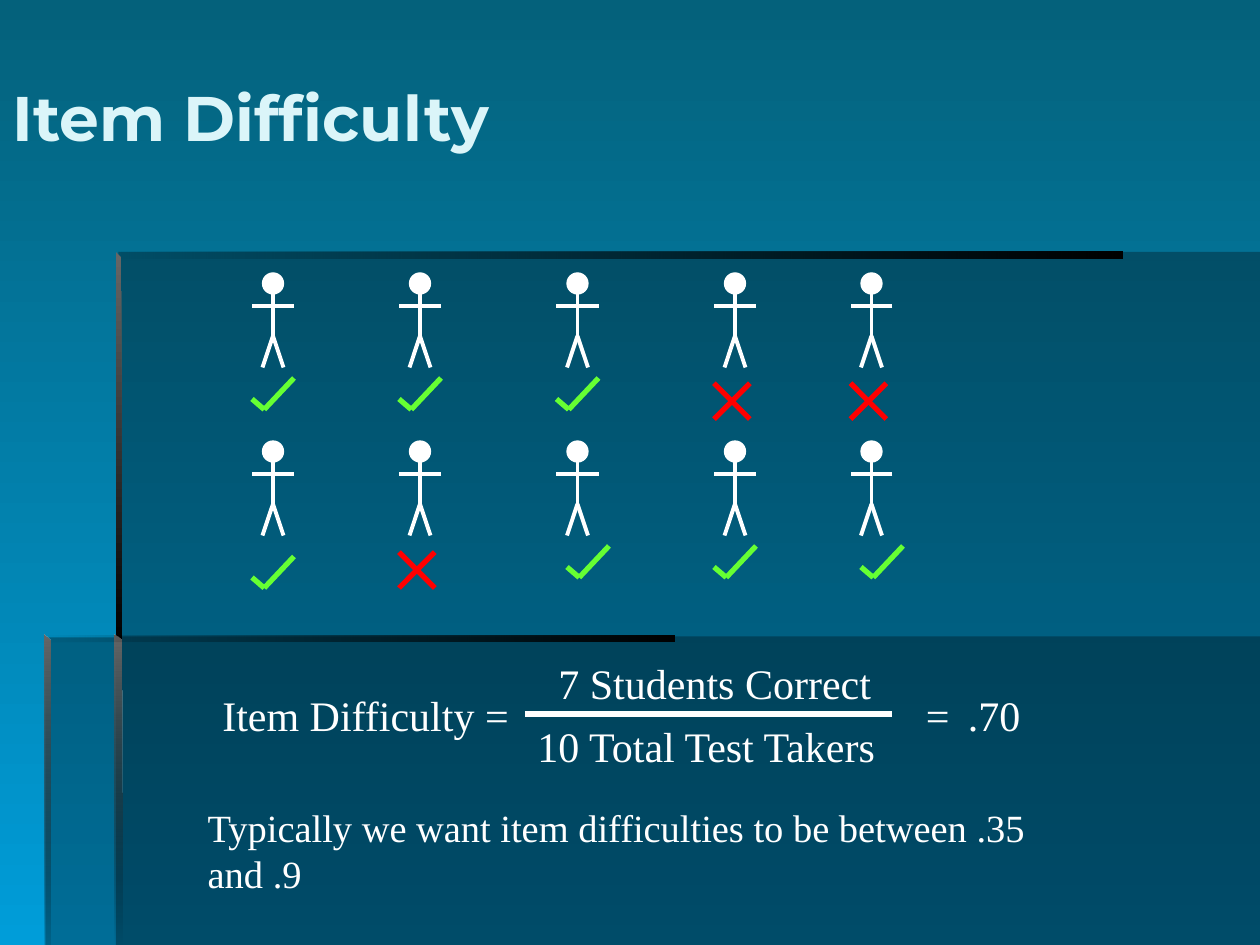
from lxml import etree
from pptx import Presentation
from pptx import util as u
from pptx.dml.color import RGBColor
from pptx.enum import shapes, text
from pptx.oxml import ns

COLORS = {
    "top": "04617B", "bottom": "009DD9", "title": "DBF5F9", "white": "FFFFFF",
    "right": "66FF33", "wrong": "FF0000", "black": "000000", "edge": "666666",
}
SERIF = "Times New Roman"

# Outline, (colour, opacity) of each gradient end, gradient angle
PANELS = [
    [(66.2, 363.6), (66.2, 540), (720, 540), (720, 363.6)],
    [(67.7, 364.3), (25.9, 364.3), (25.9, 540), (720, 540), (720, 144), (67.7, 144)],
]
FADE_IN = [("black", 0), ("black", 100)]
RAILS = [
    ([(66.2, 144), (66.2, 147.6), (641.5, 147.6), (641.5, 144)], FADE_IN, 0),
    ([(66.2, 144), (66.2, 367.2), (69.8, 367.2), (69.1, 146.9)],
     [("edge", 100), ("black", 100)], 270),
    ([(65.5, 540), (69.8, 540), (69.1, 365.8), (65.5, 362.9)],
     [("edge", 100), ("black", 0)], 270),
    ([(25.2, 362.9), (25.2, 366.5), (385.2, 366.5), (385.2, 362.9)], FADE_IN, 0),
    ([(25.2, 362.9), (25.2, 540), (28.8, 540), (28.8, 366.5)],
     [("edge", 100), ("black", 10)], 270),
]

STUDENT_CENTERS = [156, 240, 330, 420, 498]
STUDENT_TOPS = [156, 252]
CHECKS = [(144, 216), (228, 216), (318, 216),
          (144, 318), (324, 312), (408, 312), (492, 312)]
CROSSES = [(408, 219), (486, 219), (228, 315.5)]


def rgb(name):
    return RGBColor.from_string(COLORS[name])


def set_opacity(color_parent, percent):
    color = color_parent.find(".//" + ns.qn("a:srgbClr"))
    etree.SubElement(color, ns.qn("a:alpha"), val=str(percent * 1000))


def set_gradient(fill, ends, angle):
    fill.gradient()
    fill.gradient_angle = angle
    for stop, (color, opacity) in zip(fill.gradient_stops, ends):
        stop.color.rgb = rgb(color)
        if opacity < 100:
            set_opacity(stop._gs, opacity)


def add_outline(slide, points):
    points = [(u.Pt(x), u.Pt(y)) for x, y in points]
    builder = slide.shapes.build_freeform(*points[0])
    builder.add_line_segments(points[1:], close=True)
    outline = builder.convert_to_shape()
    outline.shadow.inherit = False
    outline.line.fill.background()
    return outline


def add_backdrop(slide):
    set_gradient(slide.background.fill, [("top", 100), ("bottom", 100)], 270)
    for points in PANELS:
        panel = add_outline(slide, points)
        panel.fill.solid()
        panel.fill.fore_color.rgb = rgb("black")
        set_opacity(panel._element.spPr, 30)
    for points, ends, angle in RAILS:
        set_gradient(add_outline(slide, points).fill, ends, angle)


def add_line(parent, x1, y1, x2, y2, color, width):
    line = parent.shapes.add_connector(
        shapes.MSO_CONNECTOR.STRAIGHT, u.Pt(x1), u.Pt(y1), u.Pt(x2), u.Pt(y2))
    line.line.color.rgb = rgb(color)
    line.line.width = u.Pt(width)
    etree.SubElement(line._element.spPr, ns.qn("a:effectLst"))


def add_student(slide, center, top):
    student = slide.shapes.add_group_shape()
    limbs = [(0, 12, 0, 36), (12, 19, -12, 19), (0, 36, -6, 54), (0, 36, 6, 54)]
    for x1, y1, x2, y2 in limbs:
        add_line(student, center + x1, top + y1, center + x2, top + y2, "white", 2.25)
    head = student.shapes.add_shape(
        shapes.MSO_SHAPE.OVAL, u.Pt(center - 6), u.Pt(top), u.Pt(12), u.Pt(12))
    head.shadow.inherit = False
    head.fill.solid()
    head.fill.fore_color.rgb = head.line.color.rgb = rgb("white")
    head.line.width = u.Pt(0.75)


def add_mark(slide, left, top, strokes, color):
    mark = slide.shapes.add_group_shape()
    for x1, y1, x2, y2 in strokes:
        add_line(mark, left + x1, top + y1, left + x2, top + y2, color, 3)


def format_span(span, color, **formats):
    for name, value in formats.items():
        setattr(span.font, name, value)
    span.font.color.rgb = rgb(color)


def place(box, left, top, width, height):
    for name, value in dict(left=left, top=top, width=width, height=height).items():
        setattr(box, name, u.Pt(value))


def add_title(slide, wording):
    title = slide.shapes.title
    place(title, 0, 21.6, 648, 90)
    title.text_frame.vertical_anchor = text.MSO_ANCHOR.MIDDLE
    para = title.text_frame.paragraphs[0]
    para.alignment = text.PP_ALIGN.LEFT
    span = para.add_run()
    span.text = wording
    format_span(span, "title", name="Montserrat", size=u.Pt(36), bold=True)


def add_text(slide, wording, left, top, width, height, size=24):
    box = slide.shapes.add_textbox(*map(u.Pt, (left, top, width, height)))
    box.text_frame.word_wrap = True
    para = box.text_frame.paragraphs[0]
    span = para.add_run()
    span.text = wording
    format_span(span, "white", name=SERIF, size=u.Pt(size))
    return box


def add_formula(slide):
    parts = [
        ("Item Difficulty =", 120, 390, 180),
        ("7 Students Correct", 312, 372, 198),
        ("10 Total Test Takers", 300, 408, 252),
        ("= .70", 522, 390, 180),
    ]
    for wording, left, top, width in parts:
        box = add_text(slide, wording, left, top, width, 36.7)
        box.text_frame.vertical_anchor = text.MSO_ANCHOR.MIDDLE
    # Widen the gap after the last equals sign
    para = box.text_frame.paragraphs[0]
    equals, result = para.runs[0], para.add_run()
    equals.text, result.text = "= ", ".70"
    equals._r.get_or_add_rPr().set("spc", "225")
    format_span(result, "white", name=SERIF, size=u.Pt(24))
    add_line(slide, 300, 408, 510, 408, "white", 3)


def main():
    deck = Presentation()
    deck.slide_width, deck.slide_height = u.Pt(720), u.Pt(540)
    slide = deck.slides.add_slide(deck.slide_layouts[5])
    add_backdrop(slide)
    add_title(slide, "Item Difficulty")
    for top in STUDENT_TOPS:
        for center in STUDENT_CENTERS:
            add_student(slide, center, top)
    for left, top in CHECKS:
        add_mark(slide, left, top, [(0, 12, 7, 18), (7, 18, 24, 0)], "right")
    for left, top in CROSSES:
        add_mark(slide, left, top, [(0, 0, 20.5, 20.5), (0, 20.5, 20.5, 0)], "wrong")
    add_formula(slide)
    add_text(slide, "Typically we want item difficulties to be between .35 and .9",
             111.6, 455.8, 516, 33.8, size=22)
    deck.save("out.pptx")


if __name__ == "__main__":
    main()
